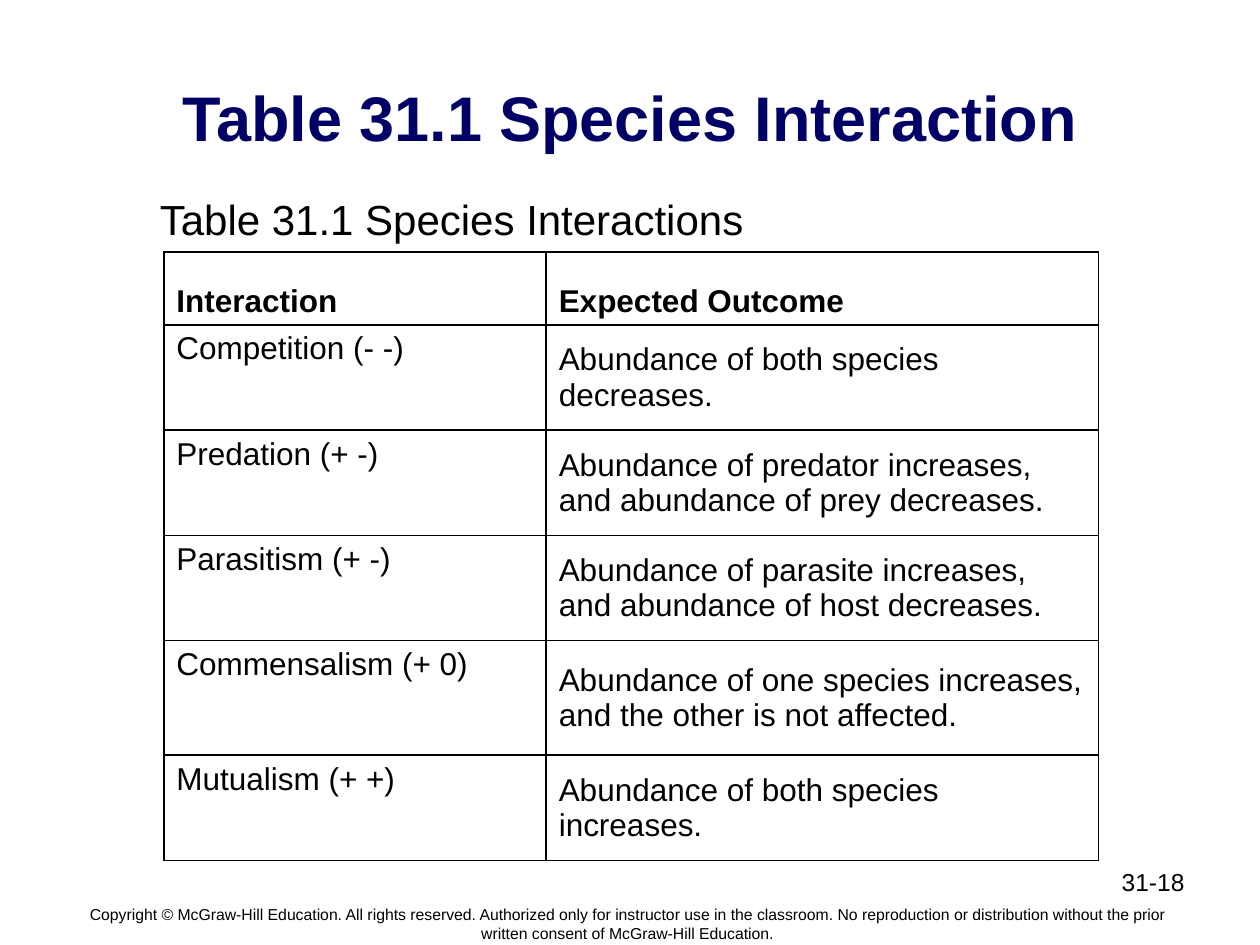
from dataclasses import dataclass

from lxml.etree import SubElement
from pptx import Presentation
from pptx.dml.color import RGBColor
from pptx.enum.text import MSO_ANCHOR, PP_ALIGN
from pptx.oxml.ns import qn
from pptx.util import Inches, Pt


@dataclass(frozen=True)
class Theme:
    font: str = "Arial"
    ink: str = "000000"
    heading: str = "000066"
    title_size: int = 36
    caption_size: int = 24
    table_size: int = 18
    number_size: int = 14
    copyright_size: int = 9
    border_width: int = 1


class SlideBuilder:
    """Places elements on a grid of 100 columns by 75 rows."""

    def __init__(self, deck, theme):
        self.theme = theme
        self.column = deck.slide_width / 100
        self.row = deck.slide_height / 75
        self.slide = deck.slides.add_slide(deck.slide_layouts[5])

    def area(self, left, top, width, height):
        return (round(left * self.column), round(top * self.row),
                round(width * self.column), round(height * self.row))

    def set_text(self, frame, text, size, align=PP_ALIGN.LEFT, bold=False, color=None):
        frame.word_wrap = True
        frame.text = text
        paragraph = frame.paragraphs[0]
        paragraph.alignment = align
        font = paragraph.font
        font.name, font.size, font.bold = self.theme.font, Pt(size), bold
        font.color.rgb = RGBColor.from_string(color or self.theme.ink)

    def title(self, text, area):
        heading = self.slide.shapes.title
        heading.left, heading.top, heading.width, heading.height = self.area(*area)
        heading.text_frame.vertical_anchor = MSO_ANCHOR.MIDDLE
        self.set_text(heading.text_frame, text, self.theme.title_size,
                      PP_ALIGN.CENTER, True, self.theme.heading)

    def text(self, text, area, size, align=PP_ALIGN.LEFT):
        box = self.slide.shapes.add_textbox(*self.area(*area))
        self.set_text(box.text_frame, text, size, align)

    def border(self, cell):
        properties = cell._tc.get_or_add_tcPr()
        for side in ("a:lnL", "a:lnR", "a:lnT", "a:lnB"):
            line = SubElement(properties, qn(side), w=str(Pt(self.theme.border_width)))
            fill = SubElement(line, qn("a:solidFill"))
            SubElement(fill, qn("a:srgbClr"), val=self.theme.ink)

    def table(self, records, left, top, widths, heights):
        area = self.area(left, top, sum(widths), sum(heights))
        table = self.slide.shapes.add_table(len(records), len(widths), *area).table
        table.first_row = table.horz_banding = False
        for column, width in zip(table.columns, widths):
            column.width = round(width * self.column)
        for r, (record, height) in enumerate(zip(records, heights)):
            table.rows[r].height = round(height * self.row)
            for c, text in enumerate(record):
                cell = table.cell(r, c)
                self.border(cell)
                cell.fill.background()
                self.set_text(cell.text_frame, text, self.theme.table_size, bold=r == 0)
                if r == 0:
                    cell.vertical_anchor = MSO_ANCHOR.BOTTOM
                else:
                    cell.vertical_anchor = MSO_ANCHOR.MIDDLE if c else MSO_ANCHOR.TOP


INTERACTIONS = [
    ("Interaction", "Expected Outcome"),
    ("Competition (- -)", "Abundance of both species decreases."),
    ("Predation (+ -)",
     "Abundance of predator increases, and abundance of prey decreases."),
    ("Parasitism (+ -)",
     "Abundance of parasite increases, and abundance of host decreases."),
    ("Commensalism (+ 0)",
     "Abundance of one species increases, and the other is not affected."),
    ("Mutualism (+ +)", "Abundance of both species increases."),
]
COPYRIGHT = (
    "Copyright © McGraw-Hill Education. All rights reserved. Authorized only for "
    "instructor use in the classroom. No reproduction or distribution without the "
    "prior written consent of McGraw-Hill Education."
)


def main():
    deck = Presentation()
    deck.slide_width, deck.slide_height = Inches(10), Inches(7.5)
    theme = Theme()
    page = SlideBuilder(deck, theme)

    # Footer
    page.text("31-18", (71.7, 68.3, 23.3, 5.2), theme.number_size, PP_ALIGN.RIGHT)
    page.text(COPYRIGHT, (4.8, 71.3, 90, 4.3), theme.copyright_size, PP_ALIGN.CENTER)

    # Title and table caption
    page.title("Table 31.1 Species Interaction", (12.8, 6.2, 74.4, 6))
    page.text("Table 31.1 Species Interactions", (11.7, 14.9, 75.8, 4.8),
              theme.caption_size)

    # Species interactions
    page.table(INTERACTIONS, 13, 20, widths=(30.35, 43.85),
               heights=(5.8, 8.35, 8.35, 8.35, 9.1, 8.35))

    deck.save("out.pptx")


if __name__ == "__main__":
    main()
